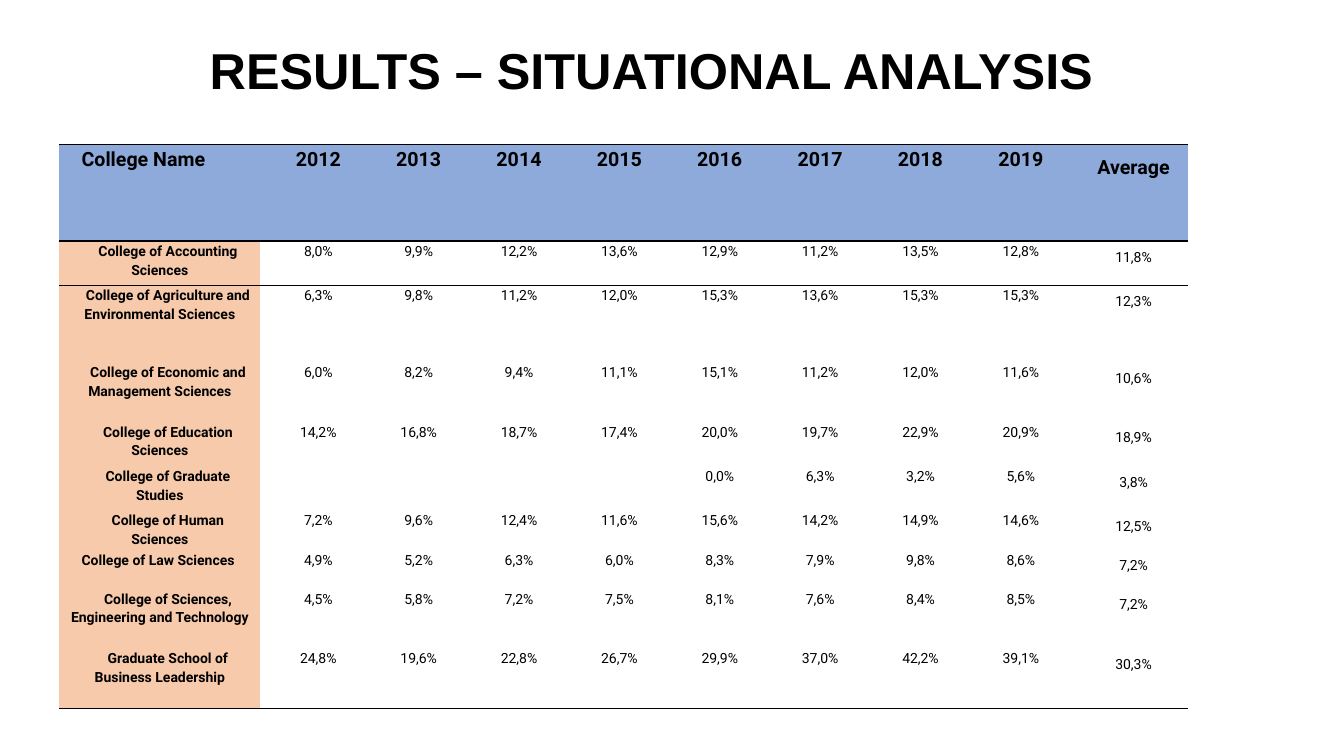
from pptx import Presentation
from pptx.dml.color import RGBColor
from pptx.enum.text import MSO_ANCHOR as Anchor, PP_ALIGN as Align
from pptx.oxml.ns import qn
from pptx.util import Pt
from lxml.etree import SubElement

BLACK = RGBColor(0x00, 0x00, 0x00)
BLUE = RGBColor(0x8E, 0xAA, 0xDB)
PEACH = RGBColor(0xF7, 0xCA, 0xAC)
NO_GRID_STYLE = "{2D5ABB26-0587-4C30-8999-92F81FD0307C}"

TITLE = "RESULTS – SITUATIONAL ANALYSIS"
HEADER = ["College Name", *map(str, range(2012, 2020)), "Average"]
COLLEGES = [
    ("College of Accounting Sciences", 31.7,
     "8,0% 9,9% 12,2% 13,6% 12,9% 11,2% 13,5% 12,8% 11,8%"),
    ("College of Agriculture and Environmental Sciences", 54.7,
     "6,3% 9,8% 11,2% 12,0% 15,3% 13,6% 15,3% 15,3% 12,3%"),
    ("College of Economic and Management Sciences", 42.7,
     "6,0% 8,2% 9,4% 11,1% 15,1% 11,2% 12,0% 11,6% 10,6%"),
    ("College of Education Sciences", 31.7,
     "14,2% 16,8% 18,7% 17,4% 20,0% 19,7% 22,9% 20,9% 18,9%"),
    ("College of Graduate Studies", 31.7,
     "0,0% 6,3% 3,2% 5,6% 3,8%"),
    ("College of Human Sciences", 28,
     "7,2% 9,6% 12,4% 11,6% 15,6% 14,2% 14,9% 14,6% 12,5%"),
    ("College of Law Sciences", 28,
     "4,9% 5,2% 6,3% 6,0% 8,3% 7,9% 9,8% 8,6% 7,2%"),
    ("College of Sciences, Engineering and Technology", 42.7,
     "4,5% 5,8% 7,2% 7,5% 8,1% 7,6% 8,4% 8,5% 7,2%"),
    ("Graduate School of Business Leadership", 42.7,
     "24,8% 19,6% 22,8% 26,7% 29,9% 37,0% 42,2% 39,1% 30,3%"),
]
LEFT_ALIGNED = ("College Name", "College of Law Sciences")
HEADER_HEIGHT = 69
COLUMN_WIDTHS = [143.3] + [71.7] * 8 + [89.3]


def add_run(paragraph, text, font_name, size, bold):
    run = paragraph.add_run()
    run.text = text
    run.font.name = font_name
    run.font.size = Pt(size)
    run.font.bold = bold
    run.font.color.rgb = BLACK


def add_title(slide):
    box = slide.shapes.add_textbox(Pt(57.6), Pt(20.2), Pt(815.8), Pt(58.3))
    frame = box.text_frame
    frame.word_wrap = True
    frame.vertical_anchor = Anchor.MIDDLE
    paragraph = frame.paragraphs[0]
    paragraph.alignment = Align.CENTER
    add_run(paragraph, TITLE, "Arial", 36, True)


def add_border(cell, side):
    line = SubElement(cell._tc.get_or_add_tcPr(), qn(f"a:{side}"), w=str(Pt(1)))
    fill = SubElement(line, qn("a:solidFill"))
    SubElement(fill, qn("a:srgbClr"), val=str(BLACK))


def fill_cell(cell, text, size, bold, line_spacing):
    cell.margin_left = cell.margin_right = Pt(4.3)
    cell.margin_top = cell.margin_bottom = 0
    if not text:
        return
    paragraph = cell.text_frame.paragraphs[0]
    paragraph.alignment = Align.LEFT if text in LEFT_ALIGNED else Align.CENTER
    paragraph.line_spacing = line_spacing
    paragraph.space_after = Pt(6)
    properties = paragraph._p.get_or_add_pPr()
    properties.set("marL", "0")
    properties.set("indent", str(Pt(11.5)))
    add_run(paragraph, text, "Roboto", size, bold)


def paint_cell(cell, color):
    if color is None:
        cell.fill.background()
    else:
        cell.fill.solid()
        cell.fill.fore_color.rgb = color


def add_results_table(slide):
    heights = [HEADER_HEIGHT] + [height for _, height, _ in COLLEGES]
    rows = [HEADER]
    for name, _, shares in COLLEGES:
        values = shares.split()
        missing = len(HEADER) - 1 - len(values)
        rows.append([name] + [""] * missing + values)

    frame = slide.shapes.add_table(len(rows), len(HEADER), Pt(42.5), Pt(103.2),
                                   Pt(sum(COLUMN_WIDTHS)), Pt(sum(heights)))
    table = frame.table
    table.horz_banding = False
    table.first_row = False
    table._tbl.tblPr.find(qn("a:tableStyleId")).text = NO_GRID_STYLE
    for column, width in zip(table.columns, COLUMN_WIDTHS):
        column.width = Pt(width)
    for row, height in zip(table.rows, heights):
        row.height = Pt(height)

    last_row, last_column = len(rows) - 1, len(HEADER) - 1
    for row_index, texts in enumerate(rows):
        is_header = row_index == 0
        for column_index, text in enumerate(texts):
            cell = table.cell(row_index, column_index)
            is_name = column_index == 0
            fill_cell(cell, text, 14 if is_header else 10, is_header or is_name,
                      1.5 if column_index == last_column else 1.15)
            if row_index in (0, 1):
                add_border(cell, "lnT")
            if row_index in (0, last_row):
                add_border(cell, "lnB")
            paint_cell(cell, BLUE if is_header else PEACH if is_name else None)


def main():
    presentation = Presentation()
    presentation.slide_width = Pt(960)
    presentation.slide_height = Pt(540)
    slide = presentation.slides.add_slide(presentation.slide_layouts[6])
    add_title(slide)
    add_results_table(slide)
    presentation.save("out.pptx")


if __name__ == "__main__":
    main()
